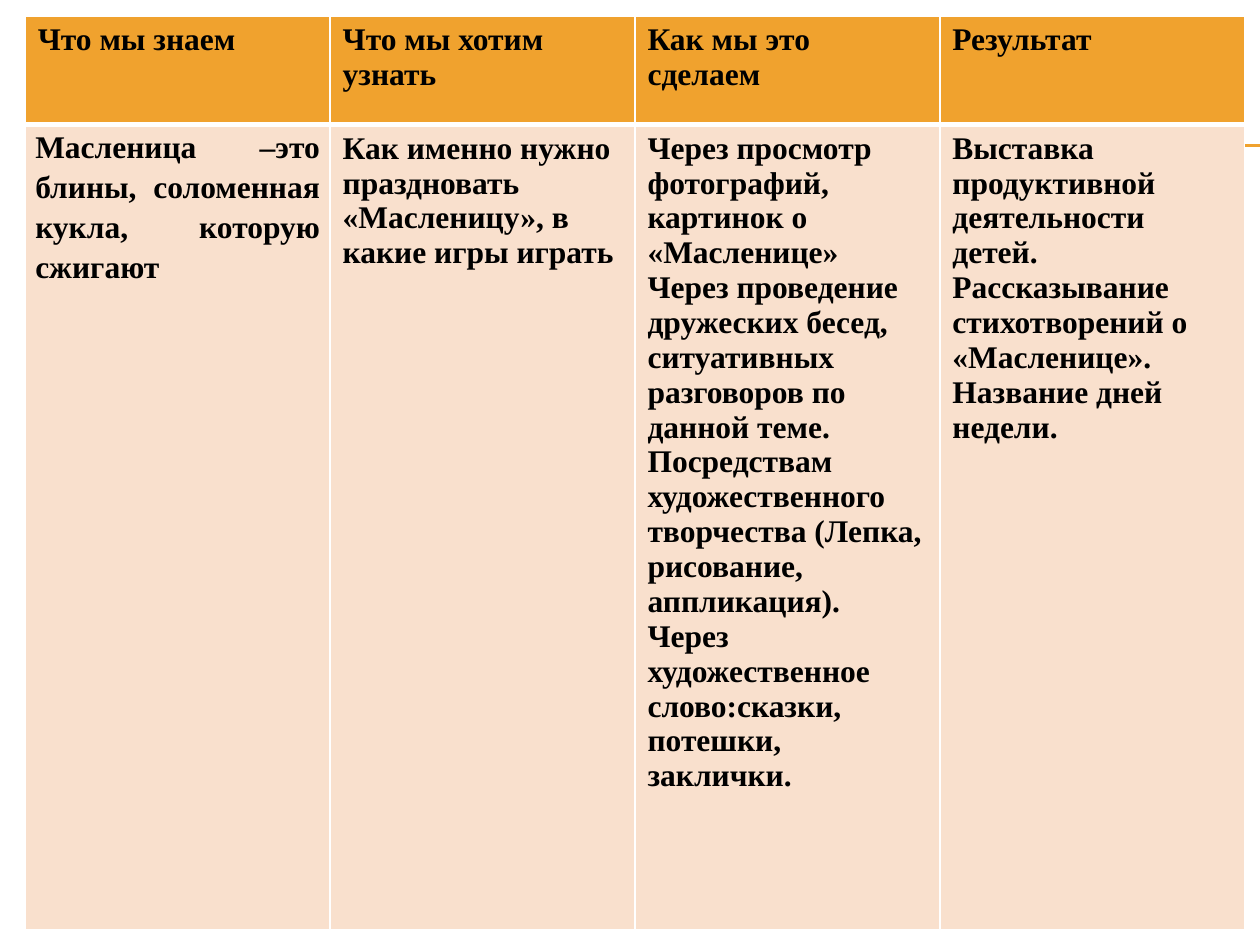
from lxml import etree
from pptx import Presentation
from pptx.dml.color import RGBColor
from pptx.enum.shapes import MSO_CONNECTOR
from pptx.enum.text import PP_ALIGN
from pptx.oxml.ns import qn
from pptx.util import Inches, Pt

STRAIGHT = MSO_CONNECTOR.STRAIGHT
JUSTIFY = PP_ALIGN.JUSTIFY
ORANGE = RGBColor(0xF0, 0xA2, 0x2E)
PEACH = RGBColor(0xF9, 0xE0, 0xCD)
WHITE = RGBColor(0xFF, 0xFF, 0xFF)
BLACK = RGBColor(0, 0, 0)

COLUMNS = [
    ("Что мы знаем", ["Масленица –это блины, соломенная кукла, которую сжигают"]),
    ("Что мы хотим узнать", ["Как именно нужно праздновать «Масленицу», в какие игры играть"]),
    ("Как мы это сделаем", [
        "Через просмотр фотографий, картинок о «Масленице»",
        "Через проведение дружеских бесед, ситуативных разговоров по данной теме.",
        "Посредствам  художественного творчества (Лепка, рисование, аппликация).",
        "Через художественное слово:сказки, потешки, заклички.",
    ]),
    ("Результат", [
        "Выставка продуктивной деятельности детей.",
        "Рассказывание стихотворений о «Масленице».",
        "Название дней недели.",
    ]),
]


def apply(target, values):
    for name, value in values.items():
        setattr(target, name, value)


class SlideBuilder:
    font = {"name": "Times New Roman", "size": Pt(18), "bold": True}

    def __init__(self, slide):
        self.s = slide

    def line(self, x1, y1, x2, y2):
        sp = self.s.shapes.add_connector(
            STRAIGHT, Inches(x1), Inches(y1), Inches(x2), Inches(y2))
        sp.line.color.rgb = ORANGE
        sp.line.width = Pt(0.75)
        etree.SubElement(sp._element.spPr, qn("a:effectLst"))

    def table(self, x, y, widths, heights):
        table = self.s.shapes.add_table(
            len(heights), len(widths), Inches(x), Inches(y),
            Inches(sum(widths)), Inches(sum(heights))).table
        table.horz_banding = False
        for column, width in zip(table.columns, widths):
            column.width = Inches(width)
        for row, height in zip(table.rows, heights):
            row.height = Inches(height)
        return table

    def borders(self, cell, widths):
        tcPr = cell._tc.get_or_add_tcPr()
        for side, width in widths.items():
            ln = etree.SubElement(tcPr, qn(f"a:ln{side}"), w=str(Pt(width)))
            fill = etree.SubElement(ln, qn("a:solidFill"))
            etree.SubElement(fill, qn("a:srgbClr"), val=str(WHITE))

    def cell(self, cell, paragraphs, color, widths, cell_format={}, text_format={}):
        self.borders(cell, widths)
        cell.fill.solid()
        cell.fill.fore_color.rgb = color
        apply(cell, cell_format)
        tf = cell.text_frame
        for i, text in enumerate(paragraphs):
            p = tf.add_paragraph() if i else tf.paragraphs[0]
            apply(p, text_format)
            r = p.add_run()
            r.text = text
            apply(r.font, self.font)
            r.font.color.rgb = BLACK


def main():
    prs = Presentation()
    prs.slide_width, prs.slide_height = Inches(10), Inches(7.5)
    b = SlideBuilder(prs.slides.add_slide(prs.slide_layouts[6]))
    for y in (1.15, 1.16):
        b.line(0.56, y, 10, y)

    table = b.table(0.2, 0.13, [2.42] * len(COLUMNS), [0.86, 6.39])
    head_border = {"L": 1, "R": 1, "T": 1, "B": 3}
    body_border = {"L": 1, "R": 1, "T": 3, "B": 1}
    narrow = {"margin_left": Inches(0.08), "margin_right": Inches(0.08),
              "margin_top": 0, "margin_bottom": 0}
    justified = {"alignment": JUSTIFY, "line_spacing": 1.15}
    for i, (title, body) in enumerate(COLUMNS):
        formats = ({}, {}) if i else (narrow, justified)
        b.cell(table.cell(0, i), [title], ORANGE, head_border)
        b.cell(table.cell(1, i), body, PEACH, body_border, *formats)
    prs.save("out.pptx")


if __name__ == "__main__":
    main()
